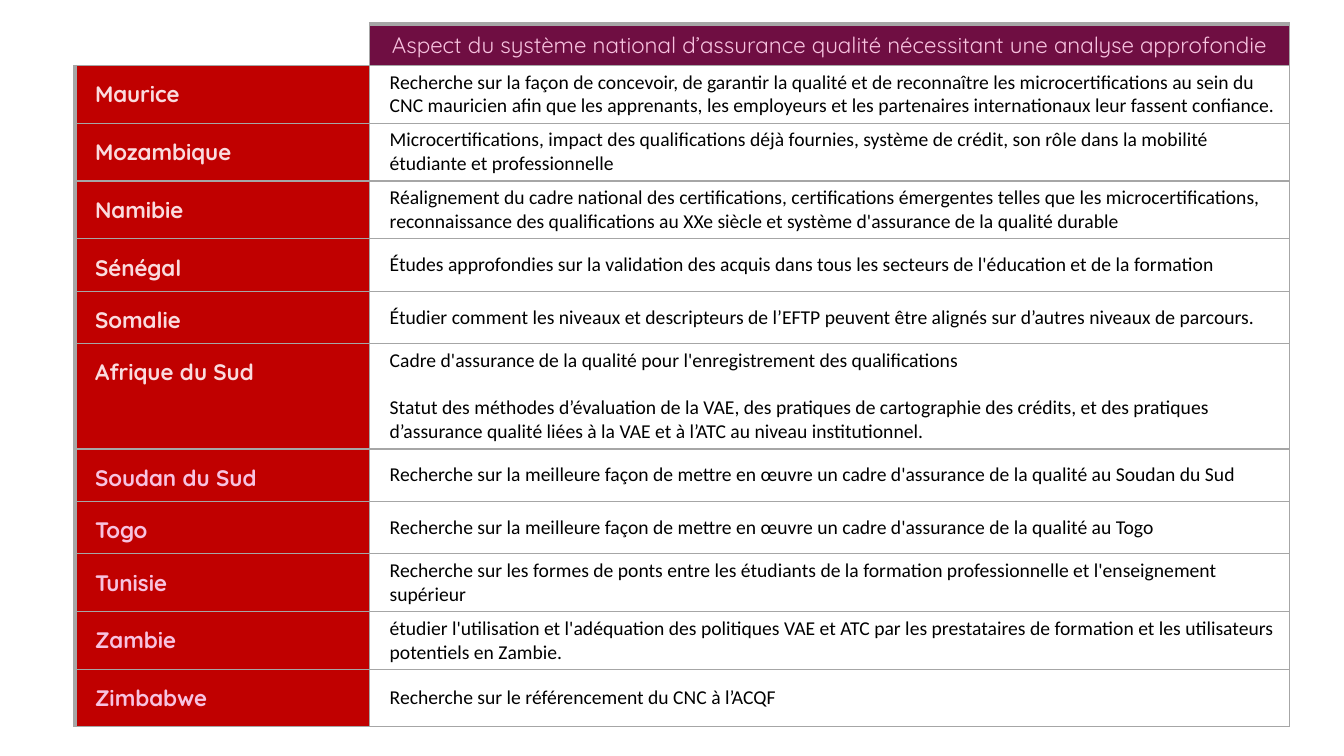
from lxml import etree
from pptx import Presentation
from pptx import util as u
from pptx.dml import color
from pptx.enum import text
from pptx.oxml import ns

GREY = "A6A6A6"
WHITE = "FFFFFF"
RED = "C00000"
PLUM = "6F0E42"
PINK = "F7C2DF"
PALE = "FADBDE"

HEADER = "Aspect du système national d’assurance qualité nécessitant une analyse approfondie"
HEADER_HEIGHT = 29.5
ROW_HEIGHT = 37.4
COUNTRIES = [
    ("Maurice", PALE, ROW_HEIGHT, "Recherche sur la façon de concevoir, de garantir la qualité et de reconnaître les microcertifications au sein du CNC mauricien afin que les apprenants, les employeurs et les partenaires internationaux leur fassent confiance."),
    ("Mozambique", PALE, ROW_HEIGHT, "Microcertifications, impact des qualifications déjà fournies, système de crédit, son rôle dans la mobilité étudiante et professionnelle"),
    ("Namibie", PALE, 39.6, "Réalignement du cadre national des certifications, certifications émergentes telles que les microcertifications, reconnaissance des qualifications au XXe siècle et système d'assurance de la qualité durable"),
    ("Sénégal", PALE, ROW_HEIGHT, "Études approfondies sur la validation des acquis dans tous les secteurs de l'éducation et de la formation"),
    ("Somalie", PALE, ROW_HEIGHT, "Étudier comment les niveaux et descripteurs de l’EFTP peuvent être alignés sur d’autres niveaux de parcours."),
    ("Afrique du Sud", PALE, ROW_HEIGHT, "Cadre d'assurance de la qualité pour l'enregistrement des qualifications\nStatut des méthodes d’évaluation de la VAE, des pratiques de cartographie des crédits, et des pratiques d’assurance qualité liées à la VAE et à l’ATC au niveau institutionnel."),
    ("Soudan du Sud", PINK, ROW_HEIGHT, "Recherche sur la meilleure façon de mettre en œuvre un cadre d'assurance de la qualité au Soudan du Sud"),
    ("Togo", PINK, ROW_HEIGHT, "Recherche sur la meilleure façon de mettre en œuvre un cadre d'assurance de la qualité au Togo"),
    ("Tunisie", PINK, ROW_HEIGHT, "Recherche sur les formes de ponts entre les étudiants de la formation professionnelle et l'enseignement supérieur"),
    ("Zambie", PINK, 41, "étudier l'utilisation et l'adéquation des politiques VAE et ATC par les prestataires de formation et les utilisateurs potentiels en Zambie."),
    ("Zimbabwe", PINK, 41, "Recherche sur le référencement du CNC à l’ACQF"),
]


def rgb(value):
    return color.RGBColor.from_string(value)


def set_borders(cell, left=1, right=1, top=1, bottom=1):
    properties = cell._tc.get_or_add_tcPr()
    widths = {"L": left, "R": right, "T": top, "B": bottom}
    for index, (side, width) in enumerate(widths.items()):
        line = etree.Element(ns.qn(f"a:ln{side}"), w=str(int(u.Pt(width))))
        if width:
            fill = etree.SubElement(line, ns.qn("a:solidFill"))
            etree.SubElement(fill, ns.qn("a:srgbClr"), val=GREY)
        else:
            etree.SubElement(line, ns.qn("a:noFill"))
        properties.insert(index, line)


def write_cell(cell, words, fill, font_color, font, size, bold=False):
    cell.fill.solid()
    cell.fill.fore_color.rgb = rgb(fill)
    cell.text_frame.text = words
    for paragraph in cell.text_frame.paragraphs:
        for run in paragraph.runs:
            run.font.name = font
            run.font.size = u.Pt(size)
            run.font.bold = bold
            run.font.color.rgb = rgb(font_color)


def write_header(blank, heading):
    blank.fill.background()
    set_borders(blank, left=0, top=0)
    write_cell(heading, HEADER, PLUM, PINK, "Quicksand", 16)
    heading.vertical_anchor = text.MSO_ANCHOR.MIDDLE
    heading.text_frame.paragraphs[0].alignment = text.PP_ALIGN.CENTER
    set_borders(heading, top=3)


def write_country(name_cell, topic_cell, name, name_color, topic):
    write_cell(name_cell, name, RED, name_color, "Quicksand", 16, True)
    name_cell.margin_top = u.Pt(10.8)
    set_borders(name_cell, left=3)
    write_cell(topic_cell, topic, WHITE, "000000", "Calibri", 14)
    topic_cell.vertical_anchor = text.MSO_ANCHOR.MIDDLE
    set_borders(topic_cell)
    for cell in (name_cell, topic_cell):
        cell.margin_left = u.Pt(14.4)
    for paragraph in topic_cell.text_frame.paragraphs[1:]:
        paragraph.space_before = u.Pt(17)


def add_country_table(slide, left, top, width):
    heights = [HEADER_HEIGHT] + [country[2] for country in COUNTRIES]
    frame = slide.shapes.add_table(len(heights), 2, u.Pt(left), u.Pt(top),
                                   u.Pt(width), u.Pt(sum(heights)))
    table = frame.table
    table.first_row = False
    table.horz_banding = False
    name_width = 210.5
    table.columns[0].width = u.Pt(name_width)
    table.columns[1].width = u.Pt(width - name_width)
    for row, height in zip(table.rows, heights):
        row.height = u.Pt(height)
    write_header(table.cell(0, 0), table.cell(0, 1))
    for index, (name, name_color, _, topic) in enumerate(COUNTRIES, 1):
        write_country(table.cell(index, 0), table.cell(index, 1), name, name_color, topic)


def main():
    presentation = Presentation()
    presentation.slide_width = u.Pt(960)
    presentation.slide_height = u.Pt(540)
    slide = presentation.slides.add_slide(presentation.slide_layouts[6])
    add_country_table(slide, 53.5, 17.2, 867.5)
    presentation.save("out.pptx")


if __name__ == "__main__":
    main()
